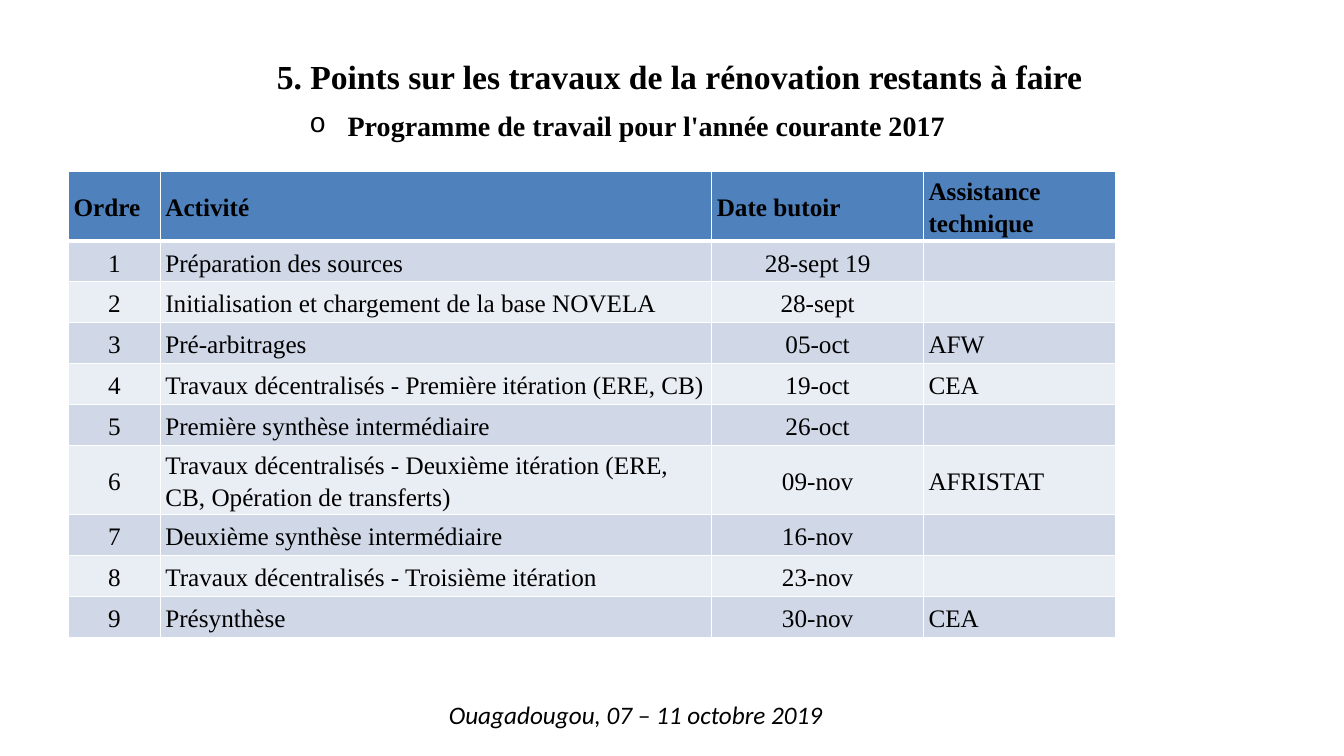
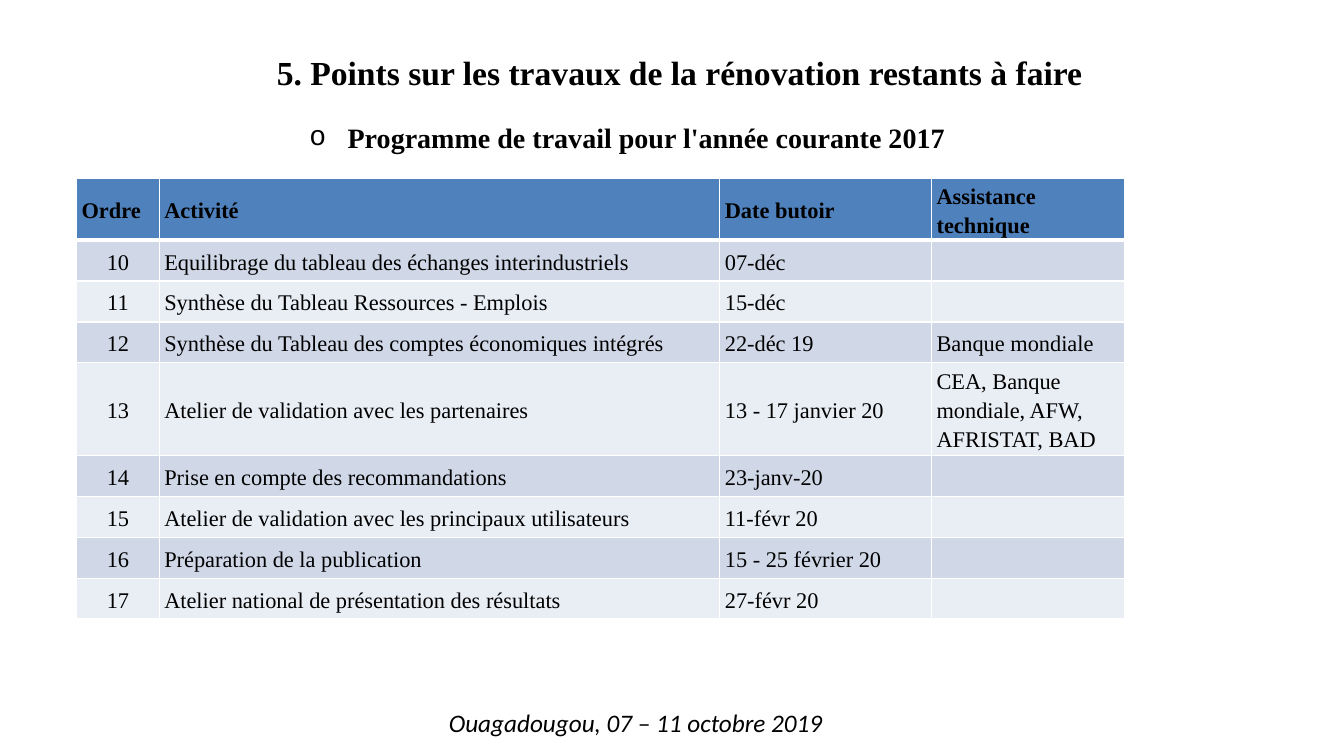
from dataclasses import dataclass

from lxml import etree
from pptx import Presentation
from pptx import util as u
from pptx.dml.color import RGBColor
from pptx.enum import text
from pptx.oxml import ns


@dataclass(frozen=True)
class Theme:
    """Colours, fonts and type sizes shared by the slides."""
    ink: str = "000000"
    rule: str = "FFFFFF"
    head: str = "4F81BD"
    bands: tuple = ("D0D8E8", "E9EDF4")
    serif: str = "Times New Roman"
    sans: str = "Calibri"
    mark: str = "Courier New"
    title: int = 24
    sub: int = 20
    foot: int = 18


THEME = Theme()
LEFT, MID = text.PP_ALIGN.LEFT, text.PP_ALIGN.CENTER
CENTRE, BASE = text.MSO_ANCHOR.MIDDLE, text.MSO_ANCHOR.BOTTOM
ROW = u.Pt(29.2)
TITLE = "5. Points sur les travaux de la rénovation restants à faire"
SUB = "Programme de travail pour l'année courante 2017"
FOOT = "Ouagadougou, 07 – 11 octobre 2019"
HEADS = ("Ordre", "Activité", "Date butoir", "Assistance technique")

FIRST = (
    ("Préparation des sources", "28-sept 19", ""),
    ("Initialisation et chargement de la base NOVELA", "28-sept", ""),
    ("Pré-arbitrages", "05-oct", "AFW"),
    ("Travaux décentralisés - Première itération (ERE, CB)", "19-oct", "CEA"),
    ("Première synthèse intermédiaire", "26-oct", ""),
    ("Travaux décentralisés - Deuxième itération (ERE, CB, Opération de transferts)",
     "09-nov", "AFRISTAT"),
    ("Deuxième synthèse intermédiaire", "16-nov", ""),
    ("Travaux décentralisés - Troisième itération", "23-nov", ""),
    ("Présynthèse", "30-nov", "CEA"),
)
SECOND = (
    ("Equilibrage du tableau des échanges interindustriels", "07-déc", ""),
    ("Synthèse du Tableau Ressources - Emplois", "15-déc", ""),
    ("Synthèse du Tableau des comptes économiques intégrés", "22-déc 19",
     "Banque mondiale"),
    ("Atelier de validation avec les partenaires", "13 - 17 janvier 20",
     "CEA, Banque mondiale, AFW, AFRISTAT, BAD"),
    ("Prise en compte des recommandations", "23-janv-20", ""),
    ("Atelier de validation avec les principaux utilisateurs", "11-févr 20", ""),
    ("Préparation de la publication", "15 - 25 février 20", ""),
    ("Atelier national de présentation des résultats", "27-févr 20", ""),
)


@dataclass(frozen=True)
class Plan:
    """Content and layout of one slide, lengths in inches."""
    rows: tuple
    start: int
    title: tuple
    anchor: int
    sub: float
    foot: float
    grid: tuple
    cols: tuple
    size: int
    dates: int


PLANS = (
    Plan(FIRST, 1, (2.49, 0.13, 8.5, 0.87), BASE, 1.03, 6.89,
         (0.68, 1.7), (0.91, 5.47, 2.1, 1.91), 18, MID),
    Plan(SECOND, 10, (2.49, 0.21, 8.5, 1.02), CENTRE, 1.15, 6.97,
         (0.76, 1.77), (0.82, 5.56, 2.1, 1.91), 16, LEFT),
)


def style(para, size, face=THEME.serif, bold=False, italic=False, align=LEFT):
    """Format a whole paragraph."""
    font = para.font
    font.name, font.size = face, u.Pt(size)
    font.bold, font.italic = bold, italic
    font.color.rgb = RGBColor.from_string(THEME.ink)
    para.alignment = align


def head(slide, box, anchor):
    """Place and format the title placeholder."""
    shape = slide.shapes.title
    shape.left, shape.top, shape.width, shape.height = map(u.Inches, box)
    frame = shape.text_frame
    frame.text = TITLE
    frame.auto_size = text.MSO_AUTO_SIZE.NONE
    frame.vertical_anchor = anchor
    style(frame.paragraphs[0], THEME.title, bold=True, align=MID)


def label(slide, words, box, wrap):
    """Add a text box and return its paragraph."""
    frame = slide.shapes.add_textbox(*map(u.Inches, box)).text_frame
    frame.word_wrap = wrap
    frame.text = words
    return frame.paragraphs[0]


def bullet(para, indent):
    """Give a paragraph a hanging round bullet."""
    props = para._p.get_or_add_pPr()
    props.set("marL", str(u.Inches(indent)))
    props.set("indent", str(-u.Inches(indent)))
    font = etree.Element(ns.qn("a:buFont"), typeface=THEME.mark)
    char = etree.Element(ns.qn("a:buChar"), char="o")
    props.insert(0, font)
    props.insert(1, char)


def border(cell, top, base):
    """Draw the four sides of a cell, widths in points."""
    props = cell._tc.get_or_add_tcPr()
    for side, width in zip("LRTB", (1, 1, top, base)):
        line = etree.SubElement(props, ns.qn(f"a:ln{side}"), w=str(u.Pt(width)))
        fill = etree.SubElement(line, ns.qn("a:solidFill"))
        etree.SubElement(fill, ns.qn("a:srgbClr"), val=THEME.rule)


def grid(slide, plan):
    """Add the work programme table."""
    body = [(str(n), *row) for n, row in enumerate(plan.rows, plan.start)]
    data = [HEADS, *body]
    left, top = map(u.Inches, plan.grid)
    table = slide.shapes.add_table(
        len(data), len(HEADS), left, top,
        u.Inches(sum(plan.cols)), ROW * len(data)).table
    for col, width in zip(table.columns, plan.cols):
        col.width = u.Inches(width)
    aligns = (MID, LEFT, plan.dates, LEFT)
    for r, row in enumerate(data):
        first = r == 0
        tint = THEME.head if first else THEME.bands[(r - 1) % 2]
        for c, words in enumerate(row):
            cell = table.cell(r, c)
            cell.text = words
            cell.vertical_anchor = CENTRE
            cell.margin_left = cell.margin_right = u.Inches(0.05)
            cell.margin_top = cell.margin_bottom = 0
            para = cell.text_frame.paragraphs[0]
            para.line_spacing = 1.15
            style(para, plan.size, bold=first, align=LEFT if first else aligns[c])
            border(cell, 3 if r == 1 else 1, 3 if first else 1)
            cell.fill.solid()
            cell.fill.fore_color.rgb = RGBColor.from_string(tint)


def page(deck, plan):
    """Build one programme slide."""
    slide = deck.slides.add_slide(deck.slide_layouts[5])
    head(slide, plan.title, plan.anchor)
    foot = label(slide, FOOT, (4.33, plan.foot, 3.95, 0.4), False)
    style(foot, THEME.foot, THEME.sans, italic=True, align=MID)
    sub = label(slide, SUB, (2.97, plan.sub, 6.93, 0.44), True)
    style(sub, THEME.sub, bold=True)
    bullet(sub, 0.38)
    grid(slide, plan)


def main():
    """Build and save the deck."""
    deck = Presentation()
    deck.slide_width, deck.slide_height = u.Inches(13.33), u.Inches(7.5)
    for plan in PLANS:
        page(deck, plan)
    deck.save("out.pptx")


if __name__ == "__main__":
    main()
